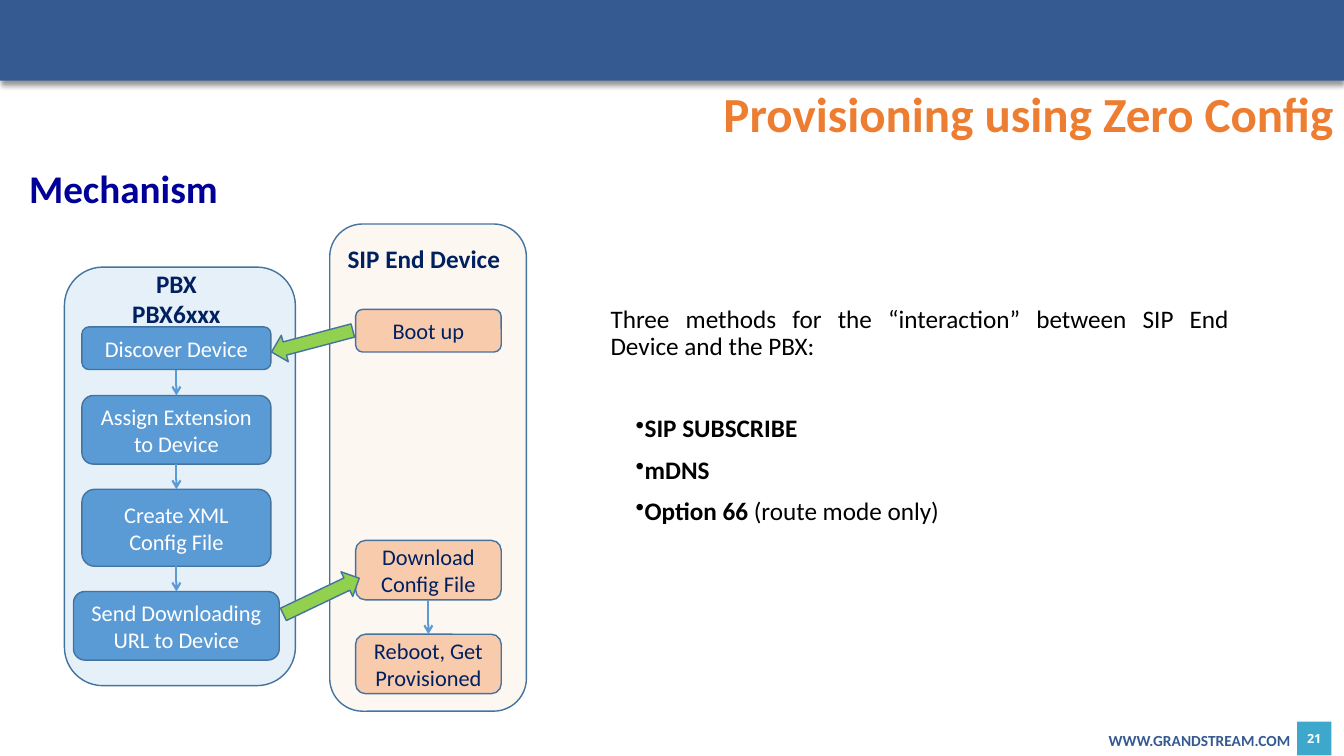
from dataclasses import dataclass

from lxml import etree
from pptx import Presentation
from pptx import util as u
from pptx.dml.color import RGBColor
from pptx.enum import shapes, text
from pptx.oxml import ns


@dataclass(frozen=True)
class Theme:
    font: str = "Calibri"
    number_font: str = "Open Sans"
    banner: str = "355A91"
    number_fill: str = "3EA8CC"
    title: str = "ED7D31"
    heading: str = "000099"
    body: str = "000000"
    navy: str = "002060"
    white: str = "FFFFFF"
    server: str = "5B9BD5"
    device: str = "F8CBAD"
    outline: str = "43739E"
    signal: str = "92D050"
    title_size: float = 35
    heading_size: float = 28
    body_size: float = 18
    step_size: float = 16
    footer_size: float = 11
    number_size: float = 9


theme = Theme()
Kind = shapes.MSO_SHAPE
Align = text.PP_ALIGN
Anchor = text.MSO_ANCHOR

deck = Presentation()
deck.slide_width, deck.slide_height = u.Pt(960), u.Pt(540)
page = deck.slides.add_slide(deck.slide_layouts[6])


def add_block(kind, place, fill, line=None):
    box = page.shapes.add_shape(kind, *map(u.Pt, place))
    box.shadow.inherit = False
    box.fill.solid()
    box.fill.fore_color.rgb = RGBColor.from_string(fill)
    if line:
        box.line.color.rgb = RGBColor.from_string(line)
        box.line.width = u.Pt(1)
    else:
        box.line.fill.background()
    return box


def write(box, words, size, color, align=Align.CENTER, bold=False,
          anchor=Anchor.MIDDLE, font=theme.font):
    """Fill a shape with uniformly styled paragraphs, one per line of words."""
    frame = box.text_frame
    frame.word_wrap = True
    frame.vertical_anchor = anchor
    frame.text = words
    for para in frame.paragraphs:
        para.alignment = align
        for span in para.runs:
            span.font.name = font
            span.font.size = u.Pt(size)
            span.font.bold = bold
            span.font.color.rgb = RGBColor.from_string(color)
    return frame


# Banner and footer
banner = add_block(Kind.RECTANGLE, (0, 0, 960, 57.6), theme.banner)
effects = banner._element.spPr.find(ns.qn("a:effectLst"))
shadow = etree.SubElement(effects, ns.qn("a:outerShdw"), blurRad=str(u.Pt(4)),
                          dist=str(u.Pt(3)), dir="5400000", rotWithShape="0")
shade = etree.SubElement(shadow, ns.qn("a:srgbClr"), val="000000")
etree.SubElement(shade, ns.qn("a:alpha"), val="40000")

number = add_block(Kind.RECTANGLE, (926.5, 515.5, 24.5, 24), theme.number_fill)
frame = write(number, "21", theme.number_size, theme.white, bold=True,
              font=theme.number_font)
frame.margin_left = frame.margin_right = frame.margin_top = frame.margin_bottom = 0

# Panels behind the two columns of steps
for place, fill in (((46, 190.8, 165, 299), theme.server),
                    ((235.5, 160, 140.5, 348), theme.device)):
    panel = add_block(Kind.ROUNDED_RECTANGLE, place, fill, theme.outline)
    tint = panel._element.spPr.find(ns.qn("a:solidFill"))[0]
    etree.SubElement(tint, ns.qn("a:alpha"), val="15000")

# Steps: label, top, width, height, linked to the step above
columns = (
    (126, theme.server, theme.white, (
        ("Discover Device", 233.5, 135, 30.5, False),
        ("Assign Extension to Device", 282.5, 135, 49, True),
        ("Create XML Config File", 349.5, 135, 55, True),
        ("Send Downloading URL to Device", 422.5, 147, 49, True))),
    (306, theme.device, theme.navy, (
        ("Boot up", 221, 104, 30.5, False),
        ("Download Config File", 386, 104, 42.5, False),
        ("Reboot, Get Provisioned", 453, 104, 42.5, True))),
)
for center, fill, ink, steps in columns:
    bottom = 0
    for label, top, width, height, linked in steps:
        step = add_block(Kind.ROUNDED_RECTANGLE,
                         (center - width / 2, top, width, height), fill, theme.outline)
        write(step, label, theme.step_size, ink)
        if linked:
            link = page.shapes.add_connector(
                shapes.MSO_CONNECTOR.STRAIGHT,
                u.Pt(center), u.Pt(bottom), u.Pt(center), u.Pt(top))
            link.line.color.rgb = RGBColor.from_string(theme.server)
            link.line.width = u.Pt(1.5)
            etree.SubElement(link.line._get_or_add_ln(), ns.qn("a:tailEnd"), type="arrow")
            etree.SubElement(link._element.spPr, ns.qn("a:effectLst"))
        bottom = top + height

# Signals between the columns
for left, top, angle in ((193, 234, 165.2), (199.5, 416.2, 334.5)):
    signal = add_block(Kind.RIGHT_ARROW, (left, top, 60, 19.5), theme.signal, theme.outline)
    signal.rotation = angle

# Plain text
for words, place, size, color, align, bold, anchor in (
    ("WWW.GRANDSTREAM.COM", (784.8, 518.4, 154.8, 21), theme.footer_size,
     theme.banner, Align.LEFT, True, Anchor.TOP),
    ("PBX\nPBX6xxx", (77, 195, 98, 36), theme.body_size,
     theme.navy, Align.CENTER, True, Anchor.MIDDLE),
    ("SIP End Device", (235.5, 166.5, 134.5, 36.5), theme.body_size,
     theme.navy, Align.CENTER, True, Anchor.MIDDLE),
    ("Mechanism", (13.7, 113.8, 418, 48), theme.heading_size,
     theme.heading, Align.LEFT, True, Anchor.TOP),
    ("Provisioning using Zero Config", (0, 56.2, 960, 49.7), theme.title_size,
     theme.title, Align.RIGHT, True, Anchor.TOP),
):
    box = page.shapes.add_textbox(*map(u.Pt, place))
    write(box, words, size, color, align, bold, anchor)

# Interaction methods
methods = page.shapes.add_textbox(u.Pt(429), u.Pt(215.3), u.Pt(456), u.Pt(147))
frame = write(methods, "Three methods for the “interaction” between SIP End Device and the PBX:\n"
              "SIP SUBSCRIBE\nmDNS\nOption 66 ",
              theme.body_size, theme.body, Align.JUSTIFY, anchor=Anchor.TOP)
intro, *bullets = frame.paragraphs
intro.line_spacing = 0.9
for para, gap in zip(bullets, (39.5, 10, 10)):
    para.line_spacing = 0.9
    para.space_before = u.Pt(gap)
    props = para._p.get_or_add_pPr()
    props.set("marL", str(u.Pt(18)))
    props.set("indent", "0")
    etree.SubElement(props, ns.qn("a:buChar"), char="•")
    para.runs[0].font.bold = True
remark = bullets[-1].add_run()
remark.text = "(route mode only)"
remark.font.name = theme.font
remark.font.size = u.Pt(theme.body_size)
remark.font.color.rgb = RGBColor.from_string(theme.body)

deck.save("out.pptx")
